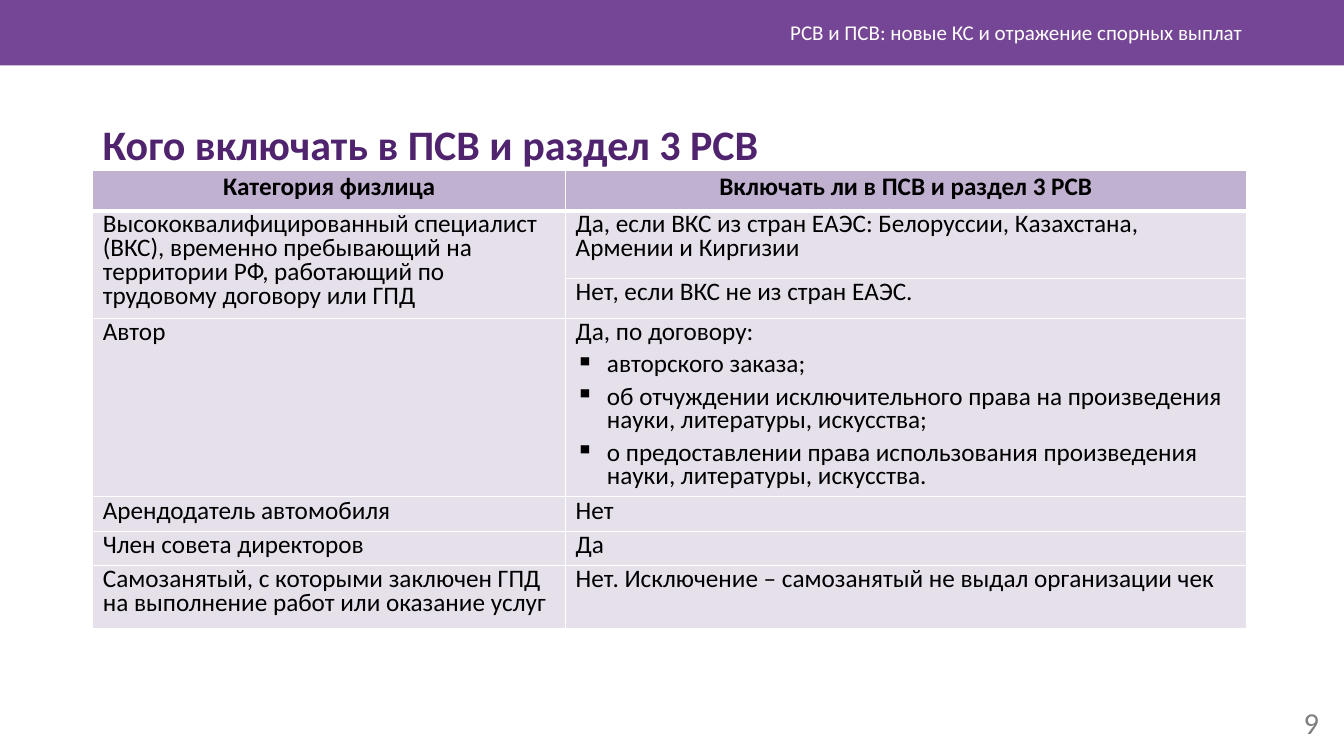
import pptx
import pptx.util
import pptx.dml.color
import pptx.enum.shapes
import pptx.enum.text
import pptx.oxml.ns
from lxml import etree

Inches = pptx.util.Inches
Pt = pptx.util.Pt
ALIGN = pptx.enum.text.PP_ALIGN
ANCHOR = pptx.enum.text.MSO_ANCHOR
FONT = "Calibri"
INK = {
    "band": "764696", "title": "50236E", "head": "C1B1D1", "cell": "E6E0EB",
    "white": "FFFFFF", "black": "000000", "grey": "808080",
}
COLS = [4.69, 6.75]
ROWS = [0.4, 0.67, 0.4, 1.77, 0.34, 0.34, 0.63]
DATA = [
    ["Категория физлица", "Включать ли в ПСВ и раздел 3 РСВ"],
    ["Высококвалифицированный специалист (ВКС), временно пребывающий на территории РФ, "
     "работающий по трудовому договору или ГПД",
     "Да, если ВКС из стран ЕАЭС: Белоруссии, Казахстана, Армении и Киргизии"],
    [None, "Нет, если ВКС не из стран ЕАЭС."],
    ["Автор",
     ["Да, по договору:", "авторского заказа;",
      "об отчуждении исключительного права на произведения науки, литературы, искусства;",
      "о предоставлении права использования произведения науки, литературы, искусства."]],
    ["Арендодатель автомобиля", "Нет"],
    ["Член совета директоров", "Да"],
    ["Самозанятый, с которыми заключен ГПД на выполнение работ или оказание услуг",
     "Нет. Исключение – самозанятый не выдал организации чек"],
]


def tint(name):
    """Return a named colour as an RGB value."""
    return pptx.dml.color.RGBColor.from_string(INK[name])


def write(para, text, size, ink, bold=False):
    """Add one formatted run to a paragraph."""
    run = para.add_run()
    run.text = text
    run.font.name = FONT
    run.font.size = Pt(size)
    run.font.bold = bold
    run.font.color.rgb = tint(ink)


def label(slide, box, text, size, ink, align, anchor=ANCHOR.MIDDLE, bold=False):
    """Place a one-line text box and return its paragraph."""
    frame = slide.shapes.add_textbox(*map(Inches, box)).text_frame
    frame.word_wrap = True
    frame.vertical_anchor = anchor
    para = frame.paragraphs[0]
    para.alignment = align
    write(para, text, size, ink, bold)
    return para


def header(slide, box):
    """Draw the top band with the running title inside it."""
    left, top, width, height = box
    band = slide.shapes.add_shape(
        pptx.enum.shapes.MSO_SHAPE.RECTANGLE, *map(Inches, box))
    band.shadow.inherit = False
    band.fill.solid()
    band.fill.fore_color.rgb = tint("band")
    band.line.fill.background()
    label(slide, (left + width - 9.79, top + 0.12, 8.88, 0.4),
          "РСВ и ПСВ: новые КС и отражение спорных выплат", 15, "white", ALIGN.RIGHT)


def edge(cell, side, width):
    """Add a white border to one side of a cell."""
    props = cell._tc.get_or_add_tcPr()
    line = etree.SubElement(props, pptx.oxml.ns.qn("a:ln" + side), w=str(Pt(width)))
    fill = etree.SubElement(line, pptx.oxml.ns.qn("a:solidFill"))
    etree.SubElement(fill, pptx.oxml.ns.qn("a:srgbClr"), val=INK["white"])


def bullet(para):
    """Give a paragraph a square bullet and a hanging indent."""
    props = para._p.get_or_add_pPr()
    props.set("marL", str(Inches(0.31)))
    props.set("indent", str(Inches(-0.31)))
    etree.SubElement(props, pptx.oxml.ns.qn("a:buChar"), char="▪")


def fill_cell(cell, row, text):
    """Style a cell and write its paragraphs."""
    head = row == 0
    widths = {"L": 1, "R": 1, "T": 3 if row == 1 else 1, "B": 3 if head else 1}
    for side, width in widths.items():
        edge(cell, side, width)
    cell.fill.solid()
    cell.fill.fore_color.rgb = tint("head" if head else "cell")
    cell.vertical_anchor = ANCHOR.MIDDLE if head else ANCHOR.TOP
    if text is None:
        return
    frame = cell.text_frame
    for num, part in enumerate(text if isinstance(text, list) else [text]):
        para = frame.add_paragraph() if num else frame.paragraphs[0]
        if num:
            bullet(para)
            para.space_before = Pt(6)
        para.line_spacing = Pt(17)
        para.alignment = ALIGN.CENTER if head else ALIGN.LEFT
        write(para, part, 18, "black", head)


def grid(slide, box):
    """Draw the table of categories in its box."""
    table = slide.shapes.add_table(len(ROWS), len(COLS), *map(Inches, box)).table
    table.horz_banding = False
    for col, width in zip(table.columns, COLS):
        col.width = Inches(width)
    for row, height in zip(table.rows, ROWS):
        row.height = Inches(height)
    for row, texts in enumerate(DATA):
        for col, text in enumerate(texts):
            fill_cell(table.cell(row, col), row, text)
    table.cell(1, 0).merge(table.cell(2, 0))


def main():
    """Build the slide and save it."""
    deck = pptx.Presentation()
    deck.slide_width, deck.slide_height = Inches(13.33), Inches(7.5)
    slide = deck.slides.add_slide(deck.slide_layouts[6])
    header(slide, (0, 0, 13.33, 0.65))
    label(slide, (12.51, 6.97, 0.67, 0.4), "9", 21.7, "grey", ALIGN.RIGHT)
    title = label(slide, (0.92, 1.09, 11.81, 0.6), "Кого включать в ПСВ и раздел 3 РСВ",
                  30, "title", ALIGN.JUSTIFY, ANCHOR.TOP, True)
    title.line_spacing = 1.07
    grid(slide, (0.92, 1.69, sum(COLS), sum(ROWS)))
    deck.save("out.pptx")


if __name__ == "__main__":
    main()
